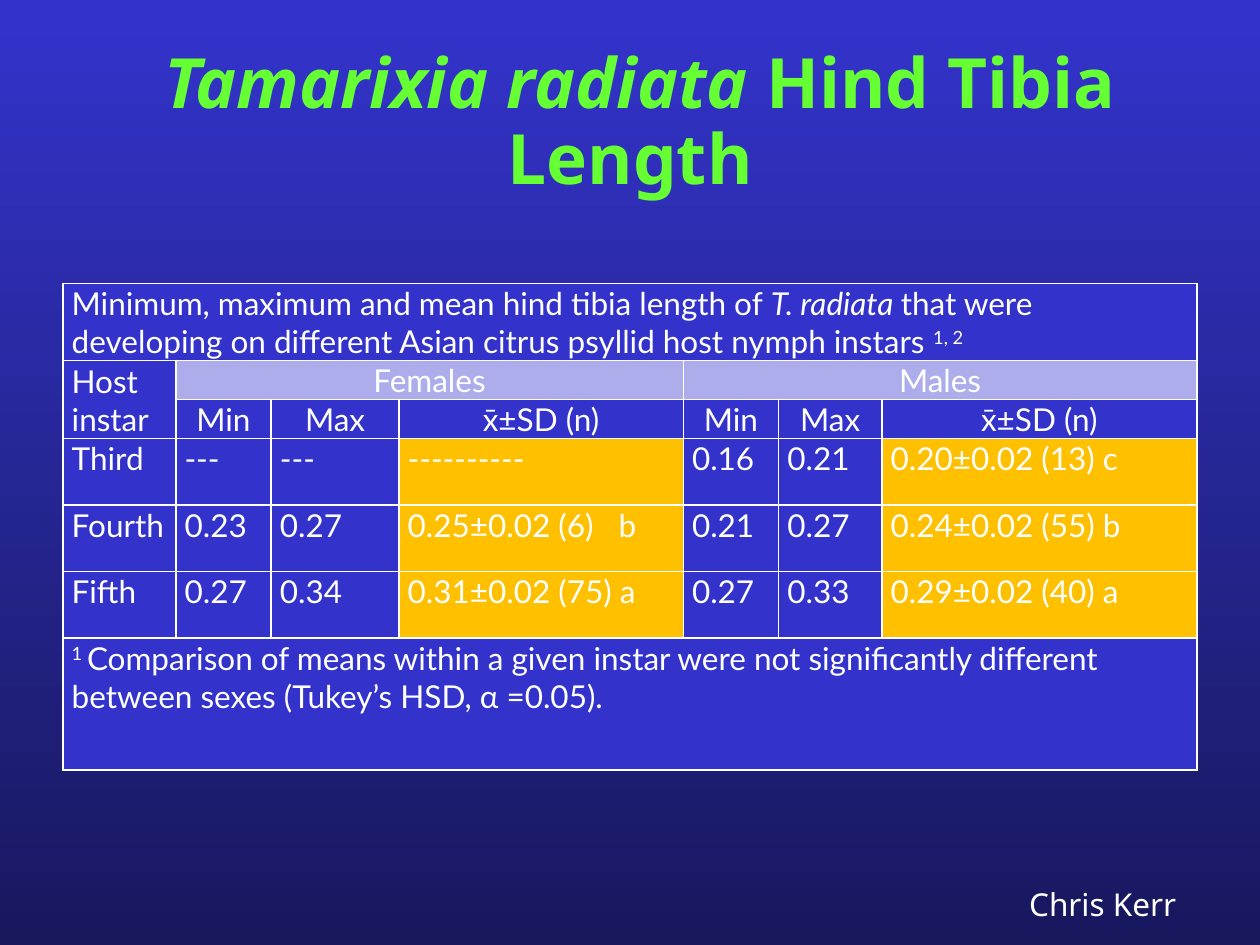
from lxml.etree import SubElement
from pptx import Presentation
from pptx.dml.color import RGBColor
from pptx.enum.text import MSO_ANCHOR, MSO_AUTO_SIZE, PP_ALIGN
from pptx.oxml.ns import qn
from pptx.util import Pt

WHITE = RGBColor(0xFF, 0xFF, 0xFF)
GREEN = RGBColor(0x66, 0xFF, 0x33)
BLUE = RGBColor(0x33, 0x33, 0xCC)
NAVY = RGBColor(0x18, 0x18, 0x5E)
LAVENDER = RGBColor(0xAD, 0xAD, 0xEB)
AMBER = RGBColor(0xFF, 0xC0, 0x00)

COLUMN_WIDTHS = (64.5, 54.5, 73, 162.5, 54.5, 59, 180)
ROW_HEIGHTS = (44, 22.3, 22.3, 38, 38, 38, 75.5)
MEAN_COLUMNS = (3, 6)
MEASURES = ("Min", "Max", "x̄±SD (n)")
INSTAR_ROWS = (
    ("Third", "---", "---", "----------", "0.16", "0.21", "0.20±0.02 (13) c"),
    ("Fourth", "0.23", "0.27", "0.25±0.02 (6)\tb", "0.21", "0.27", "0.24±0.02 (55) b"),
    ("Fifth", "0.27", "0.34", "0.31±0.02 (75) a", "0.27", "0.33", "0.29±0.02 (40) a"),
)


def add_text(paragraph, text, font="Lato", size=18, color=WHITE, bold=False,
             italic=False, superscript=False):
    """Append one formatted run to a paragraph."""
    run = paragraph.add_run()
    run.text = text
    run.font.name = font
    run.font.size = Pt(size)
    run.font.color.rgb = color
    run.font.bold = bold
    run.font.italic = italic
    if superscript:
        run.font._element.set("baseline", "30000")


def add_tab_stop(paragraph, position):
    """Give a paragraph one left tab stop."""
    tabs = SubElement(paragraph._p.get_or_add_pPr(), qn("a:tabLst"))
    SubElement(tabs, qn("a:tab"), pos=str(Pt(position)), algn="l")


def format_cell(cell, fill):
    """Set the borders, fill and margins of a table cell."""
    properties = cell._tc.get_or_add_tcPr()
    for side in ("a:lnL", "a:lnR", "a:lnT", "a:lnB"):
        line = SubElement(properties, qn(side), w=str(Pt(1)))
        SubElement(SubElement(line, qn("a:solidFill")), qn("a:srgbClr"), val=str(WHITE))
    cell.fill.solid()
    cell.fill.fore_color.rgb = fill
    cell.margin_left = cell.margin_right = Pt(5)
    cell.margin_top, cell.margin_bottom = Pt(0.7), Pt(0)


def fill_cell(cell, *parts, align=PP_ALIGN.LEFT):
    """Write (text, format) parts into a cell."""
    paragraph = cell.text_frame.paragraphs[0]
    paragraph.alignment = align
    for text, text_format in parts:
        if "\t" in text:
            add_tab_stop(paragraph, 120.5)
        add_text(paragraph, text, **text_format)


def add_background(slide):
    """Shade the slide from blue down to navy."""
    fill = slide.background.fill
    fill.gradient()
    fill.gradient_angle = 270
    for stop, color, position in zip(fill.gradient_stops, (BLUE, NAVY), (0, 1)):
        stop.color.rgb = color
        stop.position = position


def add_title(slide, left, top, width, height):
    """Place the slide title."""
    title = slide.shapes.title
    title.left, title.top, title.width, title.height = map(Pt, (left, top, width, height))
    frame = title.text_frame
    frame.word_wrap = True
    frame.auto_size = MSO_AUTO_SIZE.NONE
    frame.vertical_anchor = MSO_ANCHOR.MIDDLE
    paragraph = frame.paragraphs[0]
    paragraph.alignment = PP_ALIGN.CENTER
    paragraph.line_spacing = 0.9
    style = {"font": "Noto Sans", "color": GREEN, "bold": True}
    add_text(paragraph, " ", size=44.1, **style)
    add_text(paragraph, "Tamarixia radiata ", size=39.6, italic=True, **style)
    add_text(paragraph, "Hind Tibia Length", size=39.6, **style)


def add_tibia_table(slide, left, top, width, height):
    """Place the table of tibia lengths by host instar and sex."""
    table = slide.shapes.add_table(len(ROW_HEIGHTS), len(COLUMN_WIDTHS),
                                   Pt(left), Pt(top), Pt(width), Pt(height)).table
    for column, share in zip(table.columns, COLUMN_WIDTHS):
        column.width = Pt(width * share / sum(COLUMN_WIDTHS))
    for row, share in zip(table.rows, ROW_HEIGHTS):
        row.height = Pt(height * share / sum(ROW_HEIGHTS))

    last_row, last_column = len(ROW_HEIGHTS) - 1, len(COLUMN_WIDTHS) - 1
    for row in range(last_row + 1):
        for column in range(last_column + 1):
            fill = BLUE
            if row == 1 and column > 0:
                fill = LAVENDER
            elif 3 <= row < last_row and column in MEAN_COLUMNS:
                fill = AMBER
            format_cell(table.cell(row, column), fill)

    caption, host = table.cell(0, 0), table.cell(1, 0)
    caption.merge(table.cell(0, last_column))
    host.merge(table.cell(2, 0))
    caption.vertical_anchor = host.vertical_anchor = MSO_ANCHOR.MIDDLE
    fill_cell(caption,
              ("Minimum, maximum and mean hind tibia length of ", {}),
              ("T. radiata ", {"italic": True}),
              ("that were developing on different Asian citrus psyllid host nymph instars ", {}),
              ("1, 2", {"superscript": True}))
    fill_cell(host, ("Host instar", {}))

    for first, sex in ((1, "Females"), (4, "Males")):
        heading = table.cell(1, first)
        heading.merge(table.cell(1, first + len(MEASURES) - 1))
        fill_cell(heading, (sex, {}), align=PP_ALIGN.CENTER)
        for column, measure in enumerate(MEASURES, first):
            fill_cell(table.cell(2, column), (measure, {}), align=PP_ALIGN.CENTER)

    for row, values in enumerate(INSTAR_ROWS, 3):
        for column, value in enumerate(values):
            fill_cell(table.cell(row, column), (value, {}))

    footnote = table.cell(last_row, 0)
    footnote.merge(table.cell(last_row, last_column))
    fill_cell(footnote,
              ("1 ", {"superscript": True}),
              ("Comparison of means within a given instar were not significantly "
               "different between sexes (Tukey’s HSD, α =0.05).", {}))


def add_credit(slide, left, top, width, height):
    """Place the name of the contributor."""
    box = slide.shapes.add_textbox(Pt(left), Pt(top), Pt(width), Pt(height))
    box.text_frame.word_wrap = True
    box.text_frame.auto_size = MSO_AUTO_SIZE.SHAPE_TO_FIT_TEXT
    add_text(box.text_frame.paragraphs[0], "Chris Kerr", font="Noto Sans")


def main():
    """Build and save the presentation."""
    presentation = Presentation()
    presentation.slide_width, presentation.slide_height = Pt(720), Pt(540)
    slide = presentation.slides.add_slide(presentation.slide_layouts[5])
    add_background(slide)
    add_title(slide, 54, 24, 612, 90)
    add_tibia_table(slide, 36, 162, 648, 278)
    add_credit(slide, 581, 502, 115, 29)
    presentation.save("out.pptx")


if __name__ == "__main__":
    main()
